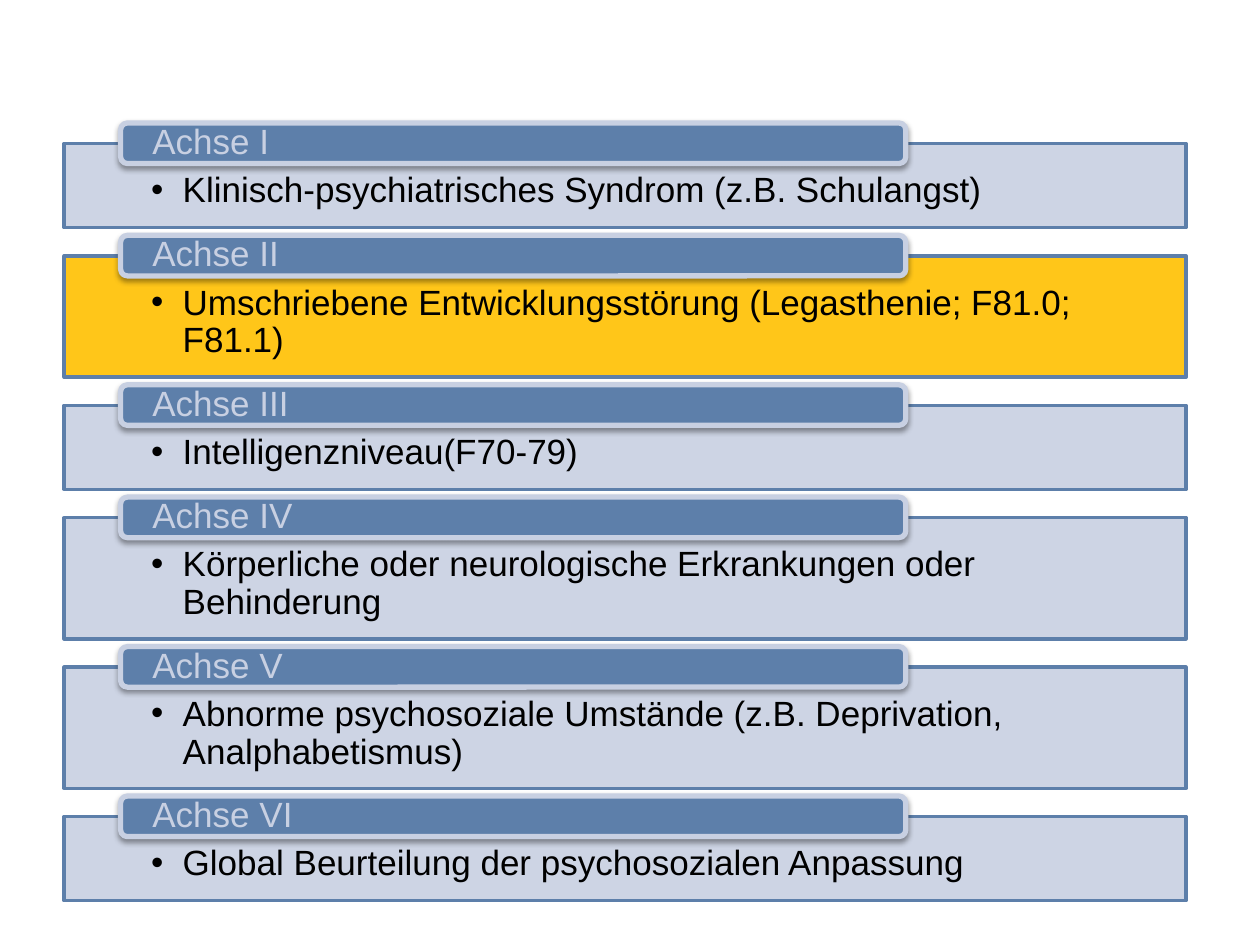
import pptx
import pptx.util
import pptx.dml.color
import pptx.enum.shapes
import pptx.enum.text
import pptx.oxml
import pptx.oxml.ns

Pt = pptx.util.Pt
SHAPE = pptx.enum.shapes.MSO_SHAPE
ANCHOR = pptx.enum.text.MSO_ANCHOR
NS = pptx.oxml.ns.nsdecls("a")


def rgb(value):
    return pptx.dml.color.RGBColor.from_string(value)


def add_box(kind, left, top, width, height, fill, line, weight, text, color, anchor, insets):
    sp = s.shapes.add_shape(kind, Pt(left), Pt(top), Pt(width), Pt(height))
    sp.shadow.inherit = False
    sp.fill.solid()
    sp.fill.fore_color.rgb = rgb(fill)
    sp.line.color.rgb = rgb(line)
    sp.line.width = Pt(weight)
    tf = sp.text_frame
    tf.word_wrap = True
    tf.vertical_anchor = anchor
    tf.margin_left = tf.margin_right = Pt(insets[0])
    tf.margin_top, tf.margin_bottom = Pt(insets[1]), Pt(insets[2])
    tf.text = text
    p = tf.paragraphs[0]
    p.alignment = pptx.enum.text.PP_ALIGN.LEFT
    p.line_spacing = 0.9
    r = p.runs[0]
    r.font.name = "Arial"
    r.font.size = Pt(20)
    r.font.color.rgb = rgb(color)
    return sp


BLUE, PALE, GOLD = "5D7FAA", "C8D0E2", "FFC000"
ONE_LINE, TWO_LINES, GAP = 48.1, 69.3, 16.1

axes = [
    ("Achse I", "Klinisch-psychiatrisches Syndrom (z.B. Schulangst)", ONE_LINE, PALE),
    ("Achse II", "Umschriebene Entwicklungsstörung (Legasthenie; F81.0; F81.1)", TWO_LINES, GOLD),
    ("Achse III", "Intelligenzniveau(F70-79)", ONE_LINE, PALE),
    ("Achse IV", "Körperliche oder neurologische Erkrankungen oder Behinderung", TWO_LINES, PALE),
    ("Achse V", "Abnorme psychosoziale Umstände (z.B. Deprivation, Analphabetismus)", TWO_LINES, PALE),
    ("Achse VI", "Global Beurteilung der psychosozialen Anpassung", ONE_LINE, PALE),
]

prs = pptx.Presentation()
prs.slide_width, prs.slide_height = Pt(720), Pt(540)
s = prs.slides.add_slide(prs.slide_layouts[6])

top = 82
for label, detail, height, fill in axes:
    body = add_box(SHAPE.RECTANGLE, 36.7, top, 641, height, fill, BLUE, 2,
                   detail, "000000", ANCHOR.TOP, (49.7, 16.6, 11.5))
    color = body.fill._xPr.find(".//" + pptx.oxml.ns.qn("a:srgbClr"))
    color.append(pptx.oxml.parse_xml(f'<a:alpha {NS} val="90000"/>'))
    p = body.text_frame.paragraphs[0]
    p.level = 1
    pPr = p._p.get_or_add_pPr()
    pPr.set("marL", str(Pt(18)))
    pPr.set("indent", str(-Pt(18)))
    pPr.append(pptx.oxml.parse_xml(f'<a:buFont {NS} typeface="Arial"/>'))
    pPr.append(pptx.oxml.parse_xml(f'<a:buChar {NS} char="•"/>'))

    tab = add_box(SHAPE.ROUNDED_RECTANGLE, 68.9, top - 11.7, 448.7, 23.2, BLUE, PALE, 3,
                  label, PALE, ANCHOR.MIDDLE, (17, 0, 0))
    effects = tab._element.spPr.find(pptx.oxml.ns.qn("a:effectLst"))
    effects.append(pptx.oxml.parse_xml(
        f'<a:outerShdw {NS} blurRad="{Pt(3.1)}" dist="{Pt(1.6)}" dir="5400000" rotWithShape="0">'
        '<a:srgbClr val="000000"><a:alpha val="38000"/></a:srgbClr></a:outerShdw>'))
    top += height + GAP

prs.save("out.pptx")
